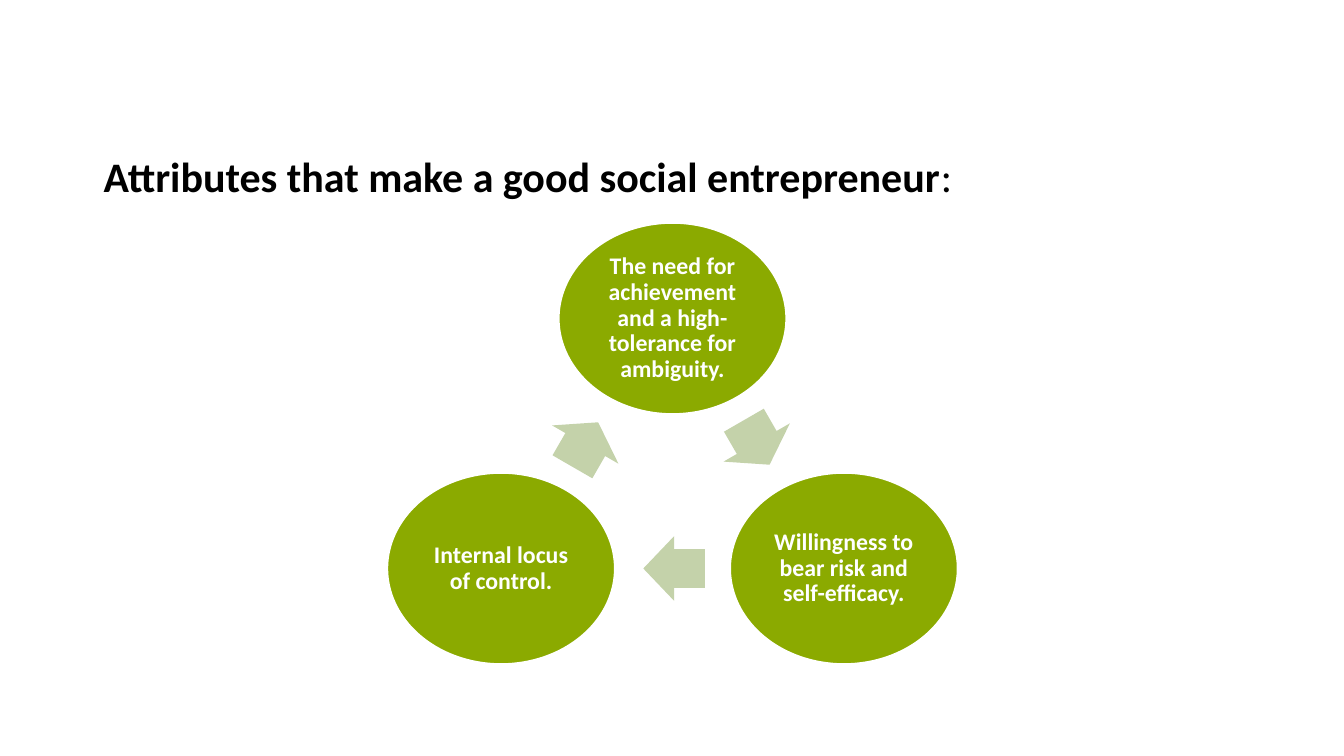
from dataclasses import dataclass

from pptx import Presentation
from pptx.dml.color import RGBColor
from pptx.enum.shapes import MSO_SHAPE as Shape
from pptx.enum.text import MSO_ANCHOR as Anchor, PP_ALIGN as Align
from pptx.util import Pt

PX = 9144  # EMU per px, 100 px to the inch


@dataclass(frozen=True)
class Theme:
    font: str = "Calibri"
    title_size: int = 30
    attribute_size: int = 17
    ink: RGBColor = RGBColor(0x00, 0x00, 0x00)
    white: RGBColor = RGBColor(0xFF, 0xFF, 0xFF)
    green: RGBColor = RGBColor(0x8B, 0xAA, 0x00)
    pale_green: RGBColor = RGBColor(0xC4, 0xD2, 0xAA)


theme = Theme()


def px(*lengths):
    return [length * PX for length in lengths]


def style_run(run, size, color, bold):
    run.font.name = theme.font
    run.font.size = Pt(size)
    run.font.color.rgb = color
    run.font.bold = bold


deck = Presentation()
deck.slide_width, deck.slide_height = px(1333, 750)
slide = deck.slides.add_slide(deck.slide_layouts[6])

# Title
title = slide.shapes.add_textbox(*px(93, 105, 1150, 145)).text_frame
title.word_wrap = True
title.vertical_anchor = Anchor.MIDDLE
heading = title.paragraphs[0]
heading.line_spacing = 0.9
for words, bold in (("Attributes that make a good social entrepreneur", True), (":", False)):
    run = heading.add_run()
    run.text = words
    style_run(run, theme.title_size, theme.ink, bold)

# Cycle of attributes, clockwise from the top
OVAL_W, OVAL_H = 226, 190
CENTER_X, TOP_Y, BOTTOM_Y, SPREAD = 667, 316, 564, 170
attributes = [
    ("The need for achievement and a high-tolerance for ambiguity.", CENTER_X, TOP_Y),
    ("Willingness to bear risk and self-efficacy.", CENTER_X + SPREAD, BOTTOM_Y),
    ("Internal locus of control.", CENTER_X - SPREAD, BOTTOM_Y),
]
for words, x, y in attributes:
    oval = slide.shapes.add_shape(
        Shape.OVAL, *px(x - OVAL_W // 2, y - OVAL_H // 2, OVAL_W, OVAL_H))
    oval.shadow.inherit = False
    oval.fill.solid()
    oval.fill.fore_color.rgb = theme.green
    oval.line.color.rgb = theme.white
    oval.line.width = Pt(1.5)

    label = oval.text_frame
    label.text = words
    label.word_wrap = True
    label.vertical_anchor = Anchor.MIDDLE
    label.margin_left, label.margin_right = px(1, 1)
    label.margin_top, label.margin_bottom = px(6, 6)
    paragraph = label.paragraphs[0]
    paragraph.alignment = Align.CENTER
    paragraph.line_spacing = 0.9
    style_run(paragraph.runs[0], theme.attribute_size, theme.white, True)

# Arrows from each attribute to the next
arrows = [
    (725, 401, 51, 76, 60),
    (638, 532, 61, 64, 180),
    (555, 403, 51, 76, 300),
]
for left, top, width, height, angle in arrows:
    arrow = slide.shapes.add_shape(Shape.RIGHT_ARROW, *px(left, top, width, height))
    arrow.rotation = angle
    arrow.adjustments[0] = 0.6
    arrow.adjustments[1] = 0.5
    arrow.shadow.inherit = False
    arrow.fill.solid()
    arrow.fill.fore_color.rgb = theme.pale_green
    arrow.line.fill.background()

deck.save("out.pptx")
